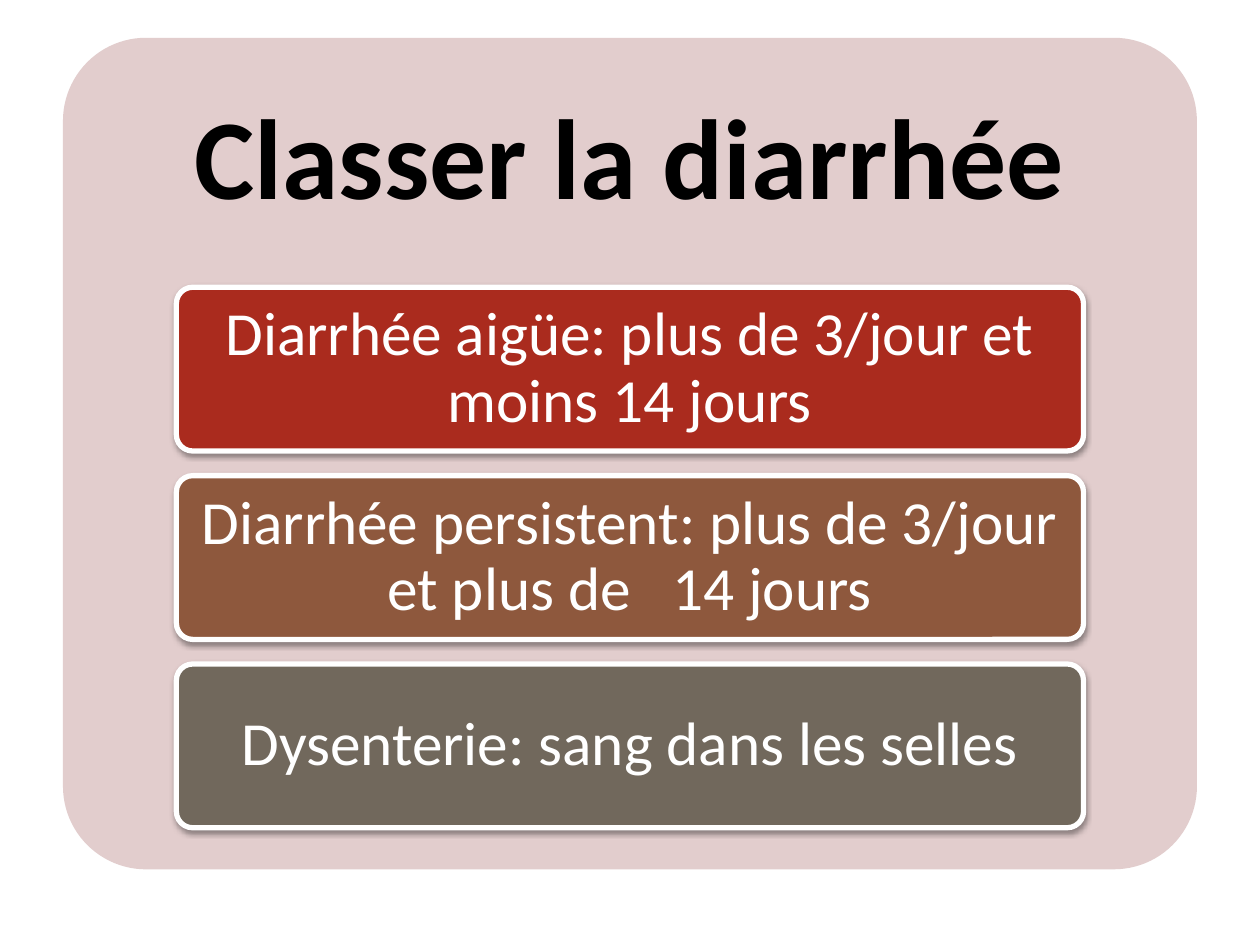
from dataclasses import dataclass

import pptx
import pptx.dml.color
import pptx.enum.shapes
import pptx.enum.text
import pptx.oxml
import pptx.oxml.ns
import pptx.shapes.autoshape
import pptx.slide
import pptx.text.text
import pptx.util
from pptx.dml.color import RGBColor
from pptx.util import Inches

BLACK = RGBColor(0x00, 0x00, 0x00)
WHITE = RGBColor(0xFF, 0xFF, 0xFF)
PINK = RGBColor(0xE2, 0xCD, 0xCD)
RED = RGBColor(0xAA, 0x2B, 0x1E)
BROWN = RGBColor(0x8E, 0x58, 0x3D)
GREY = RGBColor(0x71, 0x68, 0x5C)

FONT = "Calibri"
CORNER = 0.1

PANEL_LEFT, PANEL_TOP = Inches(0.5), Inches(0.3)
PANEL_WIDTH, PANEL_HEIGHT = Inches(9), Inches(6.6)
TITLE_HEIGHT = Inches(1.98)

# Cards take 80 % of the panel width and are centred in it
CARD_WIDTH, CARD_HEIGHT = Inches(7.2), Inches(1.3)
CARD_LEFT = PANEL_LEFT + (PANEL_WIDTH - CARD_WIDTH) // 2
CARD_TOP = PANEL_TOP + TITLE_HEIGHT
CARD_PITCH = int(CARD_HEIGHT * 1.15)

SHADOW = (
    f'<a:effectLst {pptx.oxml.ns.nsdecls("a")}>'
    f'<a:outerShdw blurRad="{pptx.util.Pt(3.1)}" dist="{pptx.util.Pt(1.6)}" '
    'dir="5400000" rotWithShape="0">'
    '<a:srgbClr val="000000"><a:alpha val="38000"/></a:srgbClr>'
    "</a:outerShdw></a:effectLst>"
)


@dataclass
class Card:
    text: str
    color: RGBColor


CARDS = [
    Card("Diarrhée aigüe: plus de 3/jour et moins 14 jours", RED),
    Card("Diarrhée persistent: plus de 3/jour et plus de   14 jours", BROWN),
    Card("Dysenterie: sang dans les selles", GREY),
]


def write_text(frame: pptx.text.text.TextFrame, text: str, size: float,
               color: RGBColor, bold: bool, side: float, edge: float) -> None:
    """Fill a frame with one centred paragraph."""
    frame.word_wrap = True
    frame.vertical_anchor = pptx.enum.text.MSO_ANCHOR.MIDDLE
    frame.margin_left = frame.margin_right = Inches(side)
    frame.margin_top = frame.margin_bottom = Inches(edge)
    frame.text = text
    para = frame.paragraphs[0]
    para.alignment = pptx.enum.text.PP_ALIGN.CENTER
    para.line_spacing = 0.9
    span = para.runs[0]
    span.font.name = FONT
    span.font.size = pptx.util.Pt(size)
    span.font.bold = bold
    span.font.color.rgb = color


def add_rounded(page: pptx.slide.Slide, left: int, top: int, width: int,
                height: int, color: RGBColor) -> pptx.shapes.autoshape.Shape:
    """Add a plain rounded rectangle without line or shadow."""
    box = page.shapes.add_shape(
        pptx.enum.shapes.MSO_SHAPE.ROUNDED_RECTANGLE, left, top, width, height)
    box.adjustments[0] = CORNER
    box.fill.solid()
    box.fill.fore_color.rgb = color
    box.line.fill.background()
    box.shadow.inherit = False
    return box


def add_card(page: pptx.slide.Slide, card: Card, top: int) -> None:
    """Add a white-edged card with a soft shadow below it."""
    box = add_rounded(page, CARD_LEFT, top, CARD_WIDTH, CARD_HEIGHT, card.color)
    box.line.color.rgb = WHITE
    box.line.width = pptx.util.Pt(3)
    no_effect = box._element.spPr.find(pptx.oxml.ns.qn("a:effectLst"))
    box._element.spPr.replace(no_effect, pptx.oxml.parse_xml(SHADOW))
    write_text(box.text_frame, card.text, 35, WHITE, False, 0.1, 0.07)


def main() -> None:
    deck = pptx.Presentation()
    deck.slide_width, deck.slide_height = Inches(10), Inches(7.5)
    page = deck.slides.add_slide(deck.slide_layouts[6])

    # Panel and title
    add_rounded(page, PANEL_LEFT, PANEL_TOP, PANEL_WIDTH, PANEL_HEIGHT, PINK)
    title = page.shapes.add_textbox(PANEL_LEFT, PANEL_TOP, PANEL_WIDTH, TITLE_HEIGHT)
    write_text(title.text_frame, "Classer la diarrhée", 65, BLACK, True, 0.27, 0.27)

    # Kinds of diarrhoea
    for index, card in enumerate(CARDS):
        add_card(page, card, CARD_TOP + index * CARD_PITCH)

    deck.save("out.pptx")


if __name__ == "__main__":
    main()
